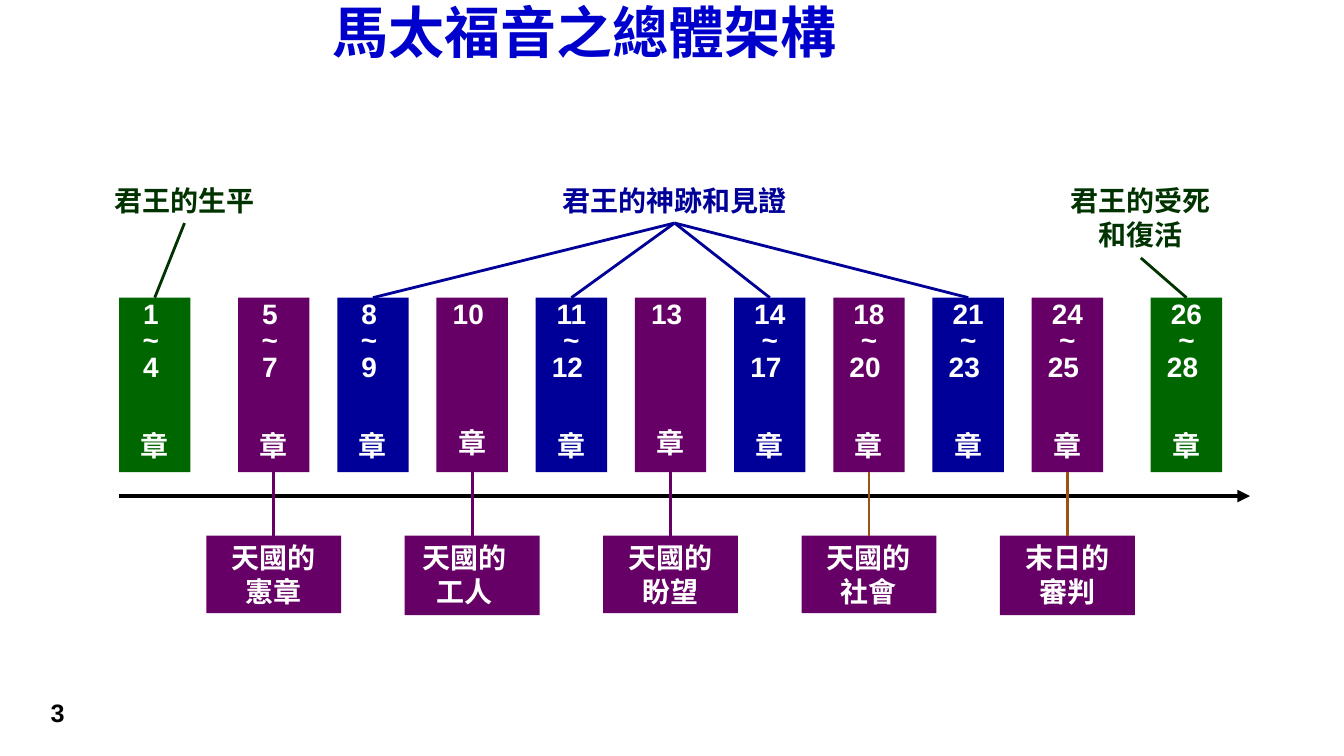
from dataclasses import dataclass

from lxml.etree import SubElement
from pptx import Presentation
from pptx.dml.color import RGBColor
from pptx.enum.shapes import MSO_CONNECTOR, MSO_SHAPE
from pptx.enum.text import MSO_ANCHOR, MSO_AUTO_SIZE, PP_ALIGN
from pptx.oxml.ns import qn
from pptx.util import Cm, Pt

COLORS = {
    "title": "0000CC", "black": "000000", "white": "FFFFFF",
    "green": "006600", "dark_green": "003300", "blue": "000099",
    "purple": "660066", "brown": "9A5315",
}
LATIN, CHINESE = "Arial", "Noto Sans CJK SC"

# Layout in centimetres
COLUMN_TOP, COLUMN_WIDTH, COLUMN_HEIGHT = 7.5, 1.8, 4.4
COLUMN_BOTTOM = COLUMN_TOP + COLUMN_HEIGHT
FIRST_LEFT, MIDDLE_LEFT, MIDDLE_STEP, LAST_LEFT = 3, 6, 2.5, 29
AXIS_TOP, AXIS_RIGHT = 12.5, 31.5
TOPIC_TOP, TOPIC_WIDTH = 13.5, 3.4
CAPTION_TOP = 4.5
BLANK_LINE = 18.4  # points


@dataclass
class Column:
    lines: list[str]
    color: str
    left: float
    blank_lines: int = 2

    @property
    def center(self) -> float:
        return self.left + COLUMN_WIDTH / 2


@dataclass
class Topic:
    column: int
    lines: list[str]
    line_color: str = "purple"
    height: float = 1.95
    first_line_margin: float = 0


@dataclass
class Caption:
    lines: list[str]
    left: float
    width: float
    height: float
    color: str
    anchor_x: float
    columns: list[int]


MIDDLE_COLUMNS = [
    (["5 ", "~ ", "7 "], "purple", 2), (["8 ", "~ ", "9 "], "blue", 2),
    (["10 "], "purple", 4), (["11 ~ 12 "], "blue", 2), (["13 "], "purple", 4),
    (["14 ~ 17 "], "blue", 2), (["18 ~ 20 "], "purple", 2),
    (["21 ~ 23 "], "blue", 2), (["24 ~ 25 "], "purple", 2),
]
CHAPTERS = [
    Column(["1 ", "~ ", "4 "], "green", FIRST_LEFT),
    *[Column(lines, color, MIDDLE_LEFT + index * MIDDLE_STEP, blanks)
      for index, (lines, color, blanks) in enumerate(MIDDLE_COLUMNS)],
    Column(["26 ~ 28 "], "green", LAST_LEFT),
]
TOPICS = [
    Topic(1, ["天國的", "憲章"]),
    Topic(3, ["天國的", "工人"], height=2, first_line_margin=11),
    Topic(5, ["天國的", "盼望"]),
    Topic(7, ["天國的", "社會"], "brown"),
    Topic(9, ["末日的", "審判"], "brown", height=2),
]
CAPTIONS = [
    Caption(["君王的生平"], 2.5, 4.3, 1.12, "dark_green", 4.65, [0]),
    Caption(["君王的受死", "和復活"], 26.5, 4.5, 2, "dark_green", 28.75, [10]),
    Caption(["君王的神跡和見證"], 13.5, 7, 1.12, "blue", 17, [2, 4, 6, 8]),
]


def rgb(name: str) -> RGBColor:
    return RGBColor.from_string(COLORS[name])


def write(shape, lines: list[str], color: str, font_name: str = CHINESE,
          size: float = 20, anchor=MSO_ANCHOR.TOP, line_spacing: float = 1) -> list:
    """Fill a shape with centred bold paragraphs and return them."""
    frame = shape.text_frame
    for name, value in {"word_wrap": True, "auto_size": MSO_AUTO_SIZE.NONE,
                        "vertical_anchor": anchor}.items():
        setattr(frame, name, value)
    frame.text = "\n".join(lines)
    paragraph_format = {"alignment": PP_ALIGN.CENTER, "line_spacing": line_spacing}
    font_format = {"name": font_name, "size": Pt(size), "bold": True}
    for paragraph in frame.paragraphs:
        for name, value in paragraph_format.items():
            setattr(paragraph, name, value)
        for run in paragraph.runs:
            for name, value in font_format.items():
                setattr(run.font, name, value)
            run.font.color.rgb = rgb(color)
            SubElement(run.font._element, qn("a:ea"), typeface=CHINESE)
    return list(frame.paragraphs)


def add_box(slide, left: float, top: float, width: float, height: float, color: str):
    shape = slide.shapes.add_shape(
        MSO_SHAPE.RECTANGLE, Cm(left), Cm(top), Cm(width), Cm(height))
    shape.shadow.inherit = False
    shape.fill.solid()
    shape.fill.fore_color.rgb = rgb(color)
    shape.line.fill.background()
    return shape


def add_line(slide, start: tuple[float, float], end: tuple[float, float],
             color: str, width: float = 2):
    connector = slide.shapes.add_connector(
        MSO_CONNECTOR.STRAIGHT, *[Cm(length) for length in (*start, *end)])
    connector.line.color.rgb = rgb(color)
    connector.line.width = Pt(width)
    SubElement(connector._element.spPr, qn("a:effectLst"))
    return connector


def add_text_box(slide, left: float, top: float, width: float, height: float):
    return slide.shapes.add_textbox(Cm(left), Cm(top), Cm(width), Cm(height))


def add_title(slide, text: str) -> None:
    title = slide.shapes.title
    for name, value in {"left": 8, "top": 0.5, "width": 17, "height": 2}.items():
        setattr(title, name, Cm(value))
    write(title, [text], "title", size=40, anchor=MSO_ANCHOR.BOTTOM)
    title.text_frame.margin_right = Cm(3.8)
    title.text_frame.margin_bottom = Cm(0.88)


def add_column(slide, column: Column) -> None:
    box = add_box(slide, column.left, COLUMN_TOP, COLUMN_WIDTH, COLUMN_HEIGHT, column.color)
    paragraphs = write(box, [*column.lines, "章"], "white", LATIN, line_spacing=0.8)
    paragraphs[-1].space_before = Pt(column.blank_lines * BLANK_LINE)


def add_topic(slide, topic: Topic) -> None:
    center = CHAPTERS[topic.column].center
    box = add_box(slide, center - TOPIC_WIDTH / 2, TOPIC_TOP, TOPIC_WIDTH,
                  topic.height, "purple")
    paragraphs = write(box, topic.lines, "white")
    if topic.first_line_margin:
        properties = paragraphs[0]._p.get_or_add_pPr()
        properties.set("marR", str(Pt(topic.first_line_margin)))
    add_line(slide, (center, COLUMN_BOTTOM), (center, TOPIC_TOP), topic.line_color)


def add_caption(slide, caption: Caption) -> None:
    box = add_text_box(slide, caption.left, CAPTION_TOP, caption.width, caption.height)
    write(box, caption.lines, caption.color)
    for index in caption.columns:
        add_line(slide, (caption.anchor_x, CAPTION_TOP + caption.height),
                 (CHAPTERS[index].center, COLUMN_TOP), caption.color)


def main() -> None:
    presentation = Presentation()
    presentation.slide_width, presentation.slide_height = Cm(33.87), Cm(19.05)
    slide = presentation.slides.add_slide(presentation.slide_layouts[5])

    # Title and page number
    add_title(slide, "馬太福音之總體架構")
    page_number = add_text_box(slide, 0.5, 17.3, 1.9, 1.3)
    write(page_number, ["3"], "black", LATIN, 18, MSO_ANCHOR.MIDDLE)

    # Time axis
    axis = add_line(slide, (FIRST_LEFT, AXIS_TOP), (AXIS_RIGHT, AXIS_TOP), "black", 3)
    SubElement(axis.line._get_or_add_ln(), qn("a:tailEnd"), type="triangle")

    # Chapters, their captions above and topics below
    for column in CHAPTERS:
        add_column(slide, column)
    for caption in CAPTIONS:
        add_caption(slide, caption)
    for topic in TOPICS:
        add_topic(slide, topic)

    presentation.save("out.pptx")


if __name__ == "__main__":
    main()
